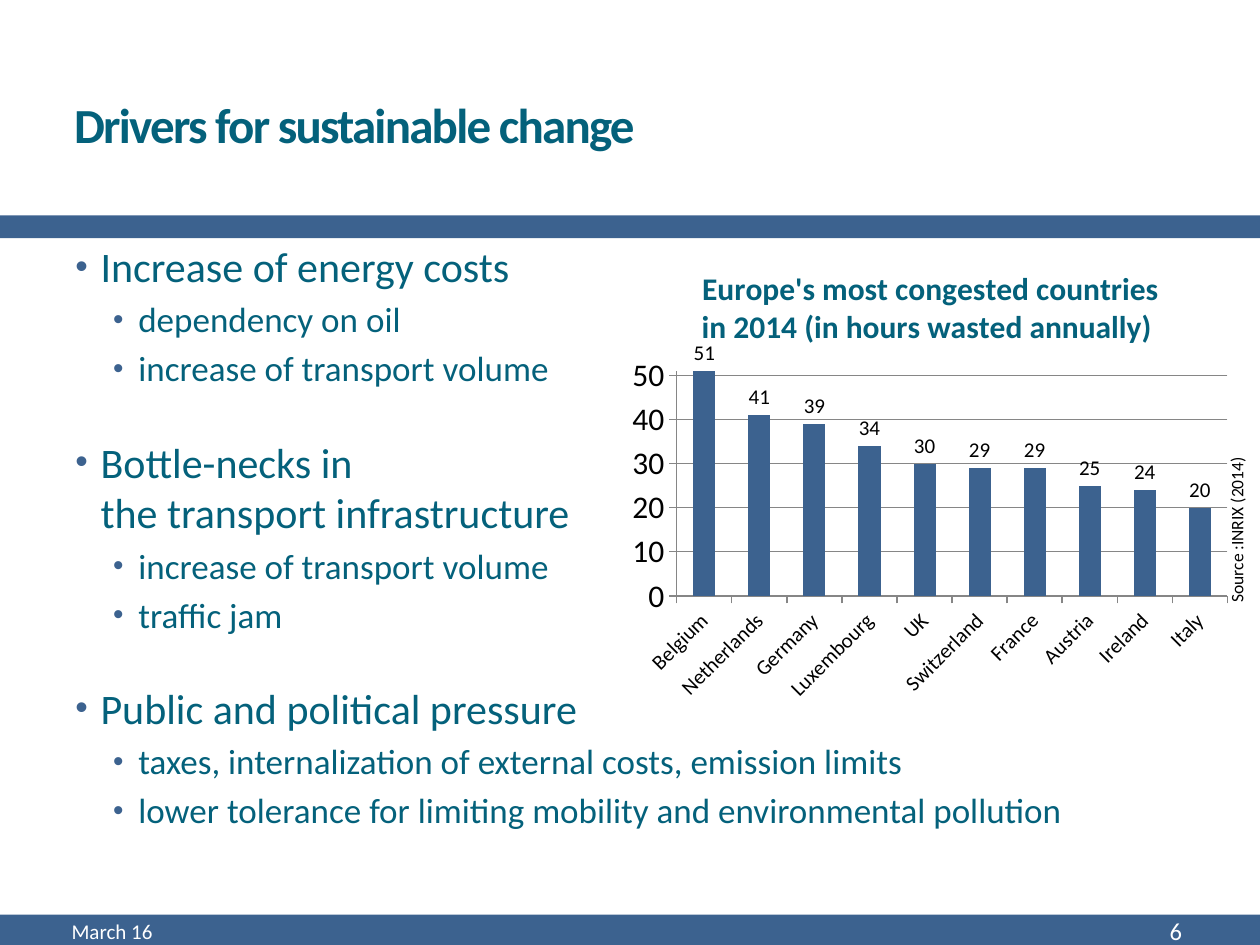
from lxml.etree import SubElement
from pptx import Presentation
from pptx.chart.data import CategoryChartData
from pptx.dml.color import RGBColor
from pptx.enum.chart import XL_CHART_TYPE, XL_LABEL_POSITION, XL_TICK_MARK
from pptx.enum.shapes import MSO_SHAPE
from pptx.enum.text import MSO_ANCHOR, PP_ALIGN
from pptx.oxml import parse_xml
from pptx.oxml.ns import nsdecls, qn
from pptx.util import Inches, Pt

FONT = "Calibri"
COLORS = {"blue": "3C628F", "teal": "04617B", "white": "FFFFFF",
          "black": "000000", "grid": "868686"}
TOPICS = [
    ("Increase of energy costs",
     ["dependency on oil", "increase of transport volume"]),
    ("Bottle-necks in \nthe transport infrastructure",
     ["increase of transport volume", "traffic jam"]),
    ("Public and political pressure",
     ["taxes, internalization of external costs, emission limits",
      "lower tolerance for limiting mobility and environmental pollution"]),
]
HOURS = {"Belgium": 51, "Netherlands": 41, "Germany": 39, "Luxembourg": 34,
         "UK": 30, "Switzerland": 29, "France": 29, "Austria": 25,
         "Ireland": 24, "Italy": 20}
CHART_TITLE = "Europe's most congested countries in 2014 (in hours wasted annually) "


def color(name):
    """Return the named colour."""
    return RGBColor.from_string(COLORS[name])


def style(font, size, name, bold=False):
    """Apply typeface, size, colour and weight."""
    font.name, font.size, font.bold = FONT, Pt(size), bold
    font.color.rgb = color(name)


def add_band(page, top, height):
    """Add a blue band across the page."""
    band = page.shapes.add_shape(MSO_SHAPE.RECTANGLE, 0, Inches(top),
                                 Inches(10), Inches(height))
    band.shadow.inherit = False
    band.fill.solid()
    band.fill.fore_color.rgb = color("blue")
    band.line.fill.background()


def add_box(page, left, top, width, height, anchor=MSO_ANCHOR.TOP):
    """Add an empty wrapping text box."""
    box = page.shapes.add_textbox(*map(Inches, (left, top, width, height)))
    box.text_frame.word_wrap = True
    box.text_frame.vertical_anchor = anchor
    return box


def add_label(page, place, text, size, name, bold=False,
              anchor=MSO_ANCHOR.MIDDLE, align=PP_ALIGN.LEFT):
    """Add a text box with one paragraph."""
    box = add_box(page, *place, anchor=anchor)
    para = box.text_frame.paragraphs[0]
    para.text, para.alignment = text, align
    style(para.font, size, name, bold)
    return box


def write_bullet(para, text, size, margin, space):
    """Fill a paragraph as a bulleted line."""
    para.text = text
    props = para._p.get_or_add_pPr()
    props.set("marL", str(Inches(margin)))
    props.set("indent", str(Inches(-0.2)))
    SubElement(SubElement(props, qn("a:buClr")), qn("a:srgbClr"),
               val=COLORS["blue"])
    SubElement(props, qn("a:buSzPct"), val="85000")
    SubElement(props, qn("a:buFont"), typeface="Arial")
    SubElement(props, qn("a:buChar"), char="•")
    para.space_before = Pt(space)
    style(para.font, size, "teal")


def add_topics(page):
    """Add the topics with their sub-points."""
    frame = add_box(page, 0.5, 1.86, 9, 5.22).text_frame
    for index, (topic, points) in enumerate(TOPICS):
        para = frame.add_paragraph() if index else frame.paragraphs[0]
        write_bullet(para, topic, 24, 0.2, 27 if index else 0)
        for point in points:
            para = frame.add_paragraph()
            para.level = 1
            write_bullet(para, point, 20, 0.5, 4)


def set_plot_layout(chart, **edges):
    """Fix the inner plot area as fractions of the chart."""
    area = chart._chartSpace.chart.plotArea
    for old in area.findall(qn("c:layout")):
        area.remove(old)
    values = "".join(f'<c:{key} val="{value}"/>' for key, value in edges.items())
    area.insert(0, parse_xml(
        f'<c:layout {nsdecls("c")}><c:manualLayout><c:layoutTarget val="inner"/>'
        f'<c:xMode val="edge"/><c:yMode val="edge"/>{values}'
        '</c:manualLayout></c:layout>'))


def style_axes(chart):
    """Format both axes and the gridlines."""
    hours, countries = chart.value_axis, chart.category_axis
    hours.minimum_scale, hours.maximum_scale, hours.major_unit = 0, 51, 10
    hours.has_major_gridlines = True
    for axis, size in ((hours, 18), (countries, 12)):
        axis.major_tick_mark = XL_TICK_MARK.OUTSIDE
        axis.minor_tick_mark = XL_TICK_MARK.NONE
        style(axis.tick_labels.font, size, "black")
        axis.format.line.color.rgb = color("grid")
    hours.major_gridlines.format.line.color.rgb = color("grid")
    countries._element.find(qn("c:txPr")).find(qn("a:bodyPr")).set("rot", "-2700000")


def add_congestion_chart(page):
    """Add the column chart of wasted hours."""
    data = CategoryChartData()
    data.categories = list(HOURS)
    data.add_series("Series 1", list(HOURS.values()))
    chart = page.shapes.add_chart(
        XL_CHART_TYPE.COLUMN_CLUSTERED,
        *map(Inches, (4.93, 1.94, 4.91, 3.72)), data).chart
    style(chart.font, 18, "black")
    chart.has_legend = False
    chart.has_title = True
    para = chart.chart_title.text_frame.paragraphs[0]
    para.text = CHART_TITLE
    style(para.font, 18, "teal", True)
    plot = chart.plots[0]
    plot.gap_width, plot.vary_by_categories = 150, False
    columns = plot.series[0]
    columns.format.fill.solid()
    columns.format.fill.fore_color.rgb = color("blue")
    labels = columns.data_labels
    labels.show_value = True
    labels.position = XL_LABEL_POSITION.OUTSIDE_END
    style(labels.font, 12, "black")
    style_axes(chart)
    set_plot_layout(chart, x=0.09, y=0.27, w=0.89, h=0.48)


def main():
    """Build and save the slide."""
    deck = Presentation()
    deck.slide_width, deck.slide_height = Inches(10), Inches(7.5)
    page = deck.slides.add_slide(deck.slide_layouts[6])
    add_band(page, 7.26, 0.24)
    add_band(page, 1.71, 0.18)
    title = add_label(page, (0.49, 0.44, 5.21, 1.08),
                      "Drivers for sustainable change", 28, "teal", True)
    span = title.text_frame.paragraphs[0].runs[0]
    span._r.get_or_add_rPr().set("spc", "-100")
    add_topics(page)
    add_label(page, (0.47, 7.21, 3.17, 0.36), "March 16", 12, "white")
    add_label(page, (8.31, 7.21, 1.17, 0.36), "6", 14, "white",
              align=PP_ALIGN.RIGHT)
    source = add_label(page, (8.5, 3.43, 2.63, 0.27), "Source :INRIX (2014)",
                       10, "black", anchor=MSO_ANCHOR.TOP)
    source.rotation = 270
    add_congestion_chart(page)
    deck.save("out.pptx")


if __name__ == "__main__":
    main()
